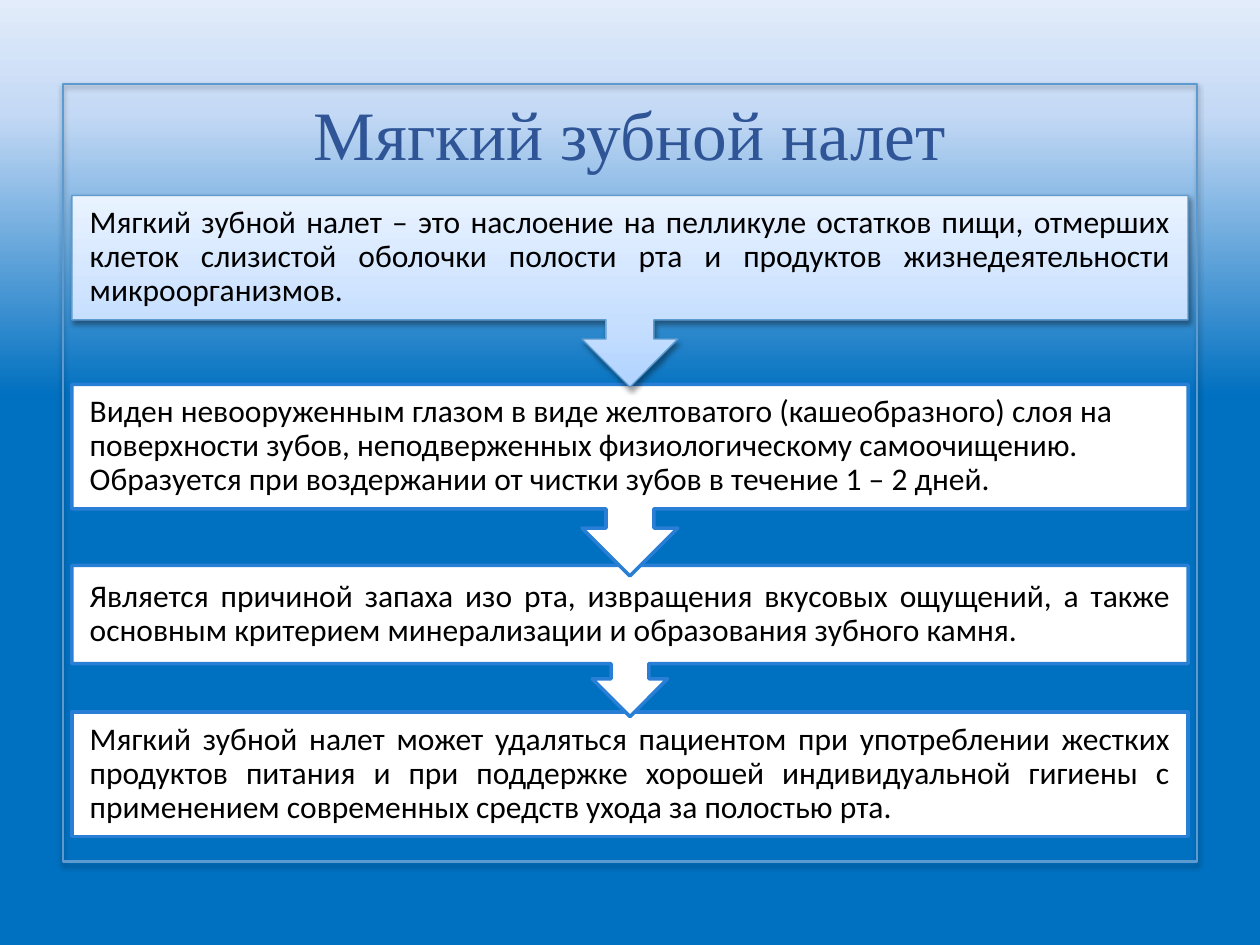
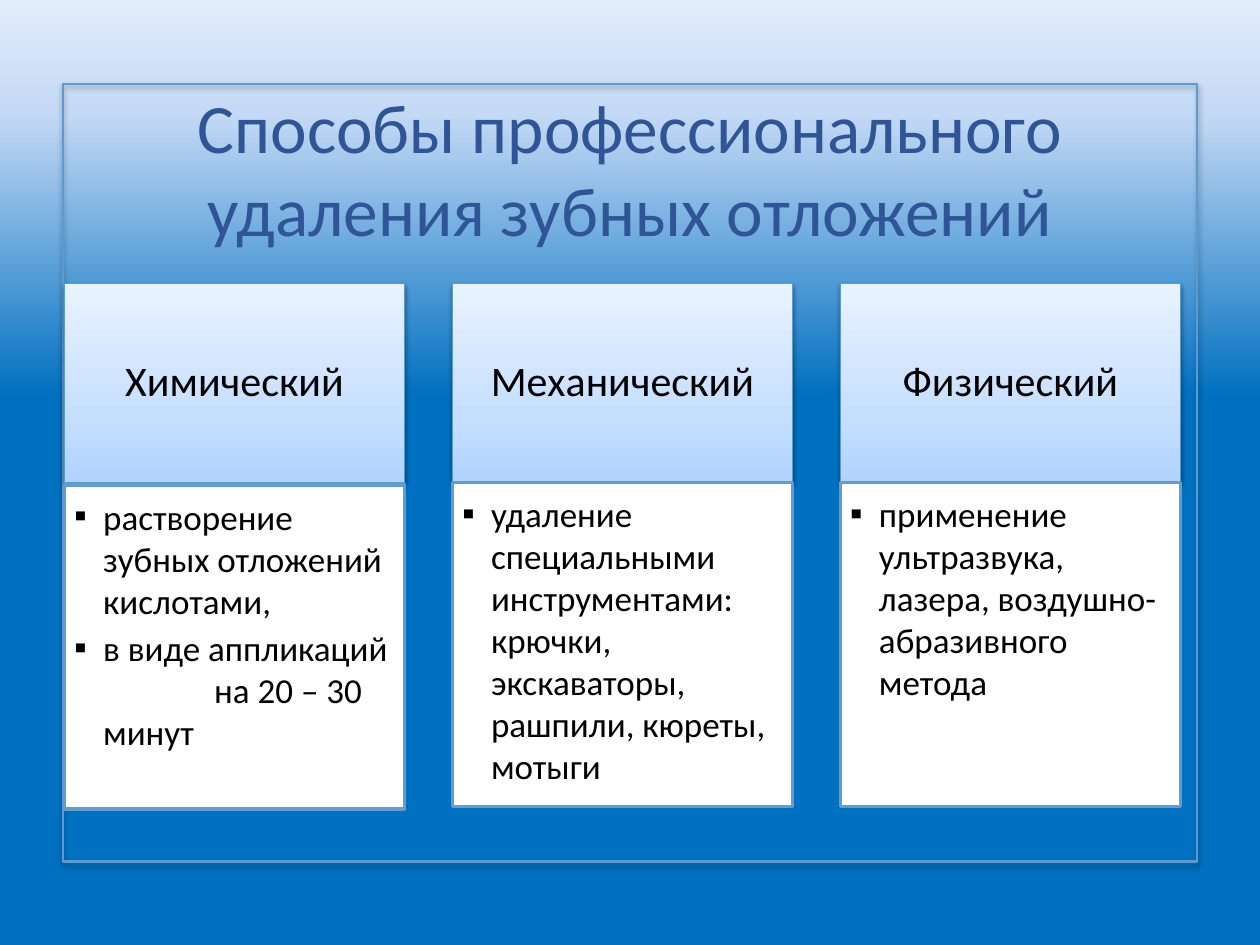
from lxml import etree
from pptx import Presentation
from pptx.dml.color import RGBColor
from pptx.enum.shapes import MSO_SHAPE
from pptx.enum.text import MSO_ANCHOR, MSO_AUTO_SIZE, PP_ALIGN
from pptx.oxml.ns import qn
from pptx.util import Cm, Pt

RECTANGLE = MSO_SHAPE.RECTANGLE
CALLOUT = MSO_SHAPE.DOWN_ARROW_CALLOUT
LEFT, CENTER, JUSTIFY = PP_ALIGN.LEFT, PP_ALIGN.CENTER, PP_ALIGN.JUSTIFY
TOP, MIDDLE = MSO_ANCHOR.TOP, MSO_ANCHOR.MIDDLE

BLACK = RGBColor(0x00, 0x00, 0x00)
WHITE = RGBColor(0xFF, 0xFF, 0xFF)
TITLE_BLUE = RGBColor(0x2F, 0x55, 0x97)
FRAME_BLUE = RGBColor(0x5D, 0x9A, 0xCF)
STEP_BLUE = RGBColor(0x29, 0x7F, 0xD5)
COLUMN_BLUE = RGBColor(0x62, 0x9D, 0xD1)
# Gradient stops (percent, colour), running from bottom to top
SKY = [(58, RGBColor(0x00, 0x70, 0xC0)), (88, RGBColor(0xC4, 0xD9, 0xF5)),
       (100, RGBColor(0xE2, 0xEC, 0xFA))]
ICE = [(0, RGBColor(0xB0, 0xD3, 0xFF)), (35, RGBColor(0xC7, 0xDF, 0xFF)),
       (100, RGBColor(0xE9, 0xF3, 0xFF))]

# Content: plaque slide, one step per box (top and height in cm)
PLAQUE_TITLE = "Мягкий зубной налет"
PLAQUE_STEPS = [
    (3.94, 2.51, JUSTIFY,
     "Мягкий зубной налет – это наслоение на пелликуле остатков пищи, отмерших "
     "клеток слизистой оболочки полости рта и продуктов жизнедеятельности "
     "микроорганизмов."),
    (7.75, 2.51, LEFT,
     "Виден невооруженным глазом в виде желтоватого (кашеобразного) слоя на "
     "поверхности зубов, неподверженных физиологическому самоочищению. "
     "Образуется при воздержании от чистки зубов в течение 1 – 2 дней."),
    (11.4, 1.98, JUSTIFY,
     "Является причиной запаха изо рта, извращения вкусовых ощущений, а также "
     "основным критерием минерализации и образования зубного камня."),
    (14.35, 2.51, JUSTIFY,
     "Мягкий зубной налет может удаляться пациентом при употреблении жестких "
     "продуктов питания и при поддержке хорошей индивидуальной гигиены с "
     "применением современных средств ухода за полостью рта."),
]

# Content: removal slide, one method per column (top of the list in cm)
REMOVAL_TITLE = "Способы профессионального удаления зубных отложений"
REMOVAL_METHODS = [
    ("Химический", 9.78, ["растворение зубных отложений кислотами,",
                          "в виде аппликаций\v\tна 20 – 30 минут"]),
    ("Механический", 9.73, ["удаление специальными инструментами: крючки, "
                            "экскаваторы, рашпили, кюреты, мотыги"]),
    ("Физический", 9.73, ["применение ультразвука, лазера, "
                          "воздушно-абразивного метода"]),
]

STEP_LEFT, STEP_WIDTH = 1.45, 22.5
CALLOUT_BODY = 0.65  # share of a callout's height above its arrow
COLUMN_LEFT, COLUMN_WIDTH, COLUMN_PITCH = 1.3, 6.86, 7.82
HEADING_TOP, HEADING_HEIGHT, LIST_HEIGHT = 5.72, 4.01, 6.53
BULLET_INDENT, TAB_STOP = Cm(0.58), Cm(2.82)


def set_gradient(fill, owner, stops):
    fill.gradient()
    gradient = next(owner.iter(qn("a:gradFill")))
    for child in list(gradient):
        gradient.remove(child)
    stop_list = etree.SubElement(gradient, qn("a:gsLst"))
    for percent, color in stops:
        stop = etree.SubElement(stop_list, qn("a:gs"), pos=str(percent * 1000))
        etree.SubElement(stop, qn("a:srgbClr"), val=str(color))
    etree.SubElement(gradient, qn("a:lin"), ang="16200000", scaled="0")


def add_shadow(shape, opacity, distance):
    effects = shape._element.spPr.find(qn("a:effectLst"))
    shadow = etree.SubElement(effects, qn("a:outerShdw"), blurRad=str(Pt(3.1)),
                              dist=str(Pt(distance)), dir="5400000", rotWithShape="0")
    color = etree.SubElement(shadow, qn("a:srgbClr"), val=str(BLACK))
    etree.SubElement(color, qn("a:alpha"), val=str(opacity * 1000))


def add_box(slide, kind, left, top, width, height, line, line_width, fill=None):
    """Add a shape; fill is a colour, a list of gradient stops or None."""
    box = slide.shapes.add_shape(kind, Cm(left), Cm(top), Cm(width), Cm(height))
    box.shadow.inherit = False
    box.line.color.rgb = line
    box.line.width = Pt(line_width)
    if fill is None:
        box.fill.background()
    elif isinstance(fill, list):
        set_gradient(box.fill, box._element.spPr, fill)
    else:
        box.fill.solid()
        box.fill.fore_color.rgb = fill
    return box


def add_ice_box(slide, kind, left, top, width, height):
    box = add_box(slide, kind, left, top, width, height, FRAME_BLUE, 0.75, ICE)
    add_shadow(box, 38, 1.6)
    return box


def add_bullet(paragraph):
    properties = paragraph._p.get_or_add_pPr()
    properties.set("marL", str(BULLET_INDENT))
    properties.set("indent", str(-BULLET_INDENT))
    etree.SubElement(properties, qn("a:buFont"), typeface="Calibri")
    etree.SubElement(properties, qn("a:buChar"), char="▪")
    tabs = etree.SubElement(properties, qn("a:tabLst"))
    etree.SubElement(tabs, qn("a:tab"), pos=str(TAB_STOP), algn="l")


def write(shape, lines, size, font="Calibri", color=BLACK, align=CENTER, anchor=MIDDLE,
          insets=(0.25, 0.13, 0.25, 0.13), spacing=1.0, after=0, bullets=False):
    frame = shape.text_frame
    frame.word_wrap = True
    frame.auto_size = MSO_AUTO_SIZE.NONE
    frame.vertical_anchor = anchor
    (frame.margin_left, frame.margin_top,
     frame.margin_right, frame.margin_bottom) = map(Cm, insets)
    for index, line in enumerate(lines):
        paragraph = frame.add_paragraph() if index else frame.paragraphs[0]
        paragraph.text = line
        if bullets:
            add_bullet(paragraph)
        paragraph.alignment = align
        paragraph.line_spacing = spacing
        paragraph.space_after = Pt(after)
        for run in paragraph.runs:
            run.font.size = Pt(size)
            run.font.name = font
            run.font.color.rgb = color


def add_titled_slide(deck, title, top, height, font):
    slide = deck.slides.add_slide(deck.slide_layouts[5])
    heading = slide.shapes.title
    heading.left, heading.top = Cm(STEP_LEFT), Cm(top)
    heading.width, heading.height = Cm(STEP_WIDTH), Cm(height)
    write(heading, [title], 39.6, font=font, color=TITLE_BLUE)
    return slide


def add_shared_look(deck, slide):
    """Put the background on the master and the thin frame on the layout."""
    master = deck.slide_master
    set_gradient(master.background.fill, master._element, SKY)
    frame = add_box(slide, RECTANGLE, 1.27, 1.7, 22.86, 15.67, FRAME_BLUE, 1.25)
    add_shadow(frame, 35, 1.8)
    slide.slide_layout.shapes._spTree.append(frame._element)


def build_plaque_slide(deck):
    slide = add_titled_slide(deck, PLAQUE_TITLE, 1.73, 1.88, "Times New Roman")
    add_shared_look(deck, slide)
    last = len(PLAQUE_STEPS) - 1
    # Bottom step first, so that each arrow lies over the next box
    for index in range(last, -1, -1):
        top, height, align, text = PLAQUE_STEPS[index]
        kind = CALLOUT
        if index == last:
            kind = RECTANGLE
        else:
            height /= CALLOUT_BODY
        place = (STEP_LEFT, top, STEP_WIDTH, height)
        if index == 0:
            step = add_ice_box(slide, kind, *place)
        else:
            step = add_box(slide, kind, *place, STEP_BLUE, 2, WHITE)
        write(step, [text], 18, align=align, insets=(0.36,) * 4, spacing=0.9)


def build_removal_slide(deck):
    slide = add_titled_slide(deck, REMOVAL_TITLE, 2.08, 2.59, "Calibri")
    for column, (method, list_top, details) in enumerate(REMOVAL_METHODS):
        left = COLUMN_LEFT + column * COLUMN_PITCH
        heading = add_ice_box(slide, RECTANGLE, left, HEADING_TOP,
                              COLUMN_WIDTH, HEADING_HEIGHT)
        write(heading, [method], 24, insets=(0.25, 0.15, 0.25, 0.15), spacing=0.9)
        detail_box = add_box(slide, RECTANGLE, left, list_top, COLUMN_WIDTH,
                             LIST_HEIGHT, COLUMN_BLUE, 2, WHITE)
        write(detail_box, details, 20, align=LEFT, anchor=TOP,
              insets=(0.2, 0.2, 0.25, 0.3), after=3, bullets=True)


def main():
    deck = Presentation()
    deck.slide_width, deck.slide_height = Cm(25.4), Cm(19.05)
    build_plaque_slide(deck)
    build_removal_slide(deck)
    deck.save("out.pptx")


if __name__ == "__main__":
    main()
